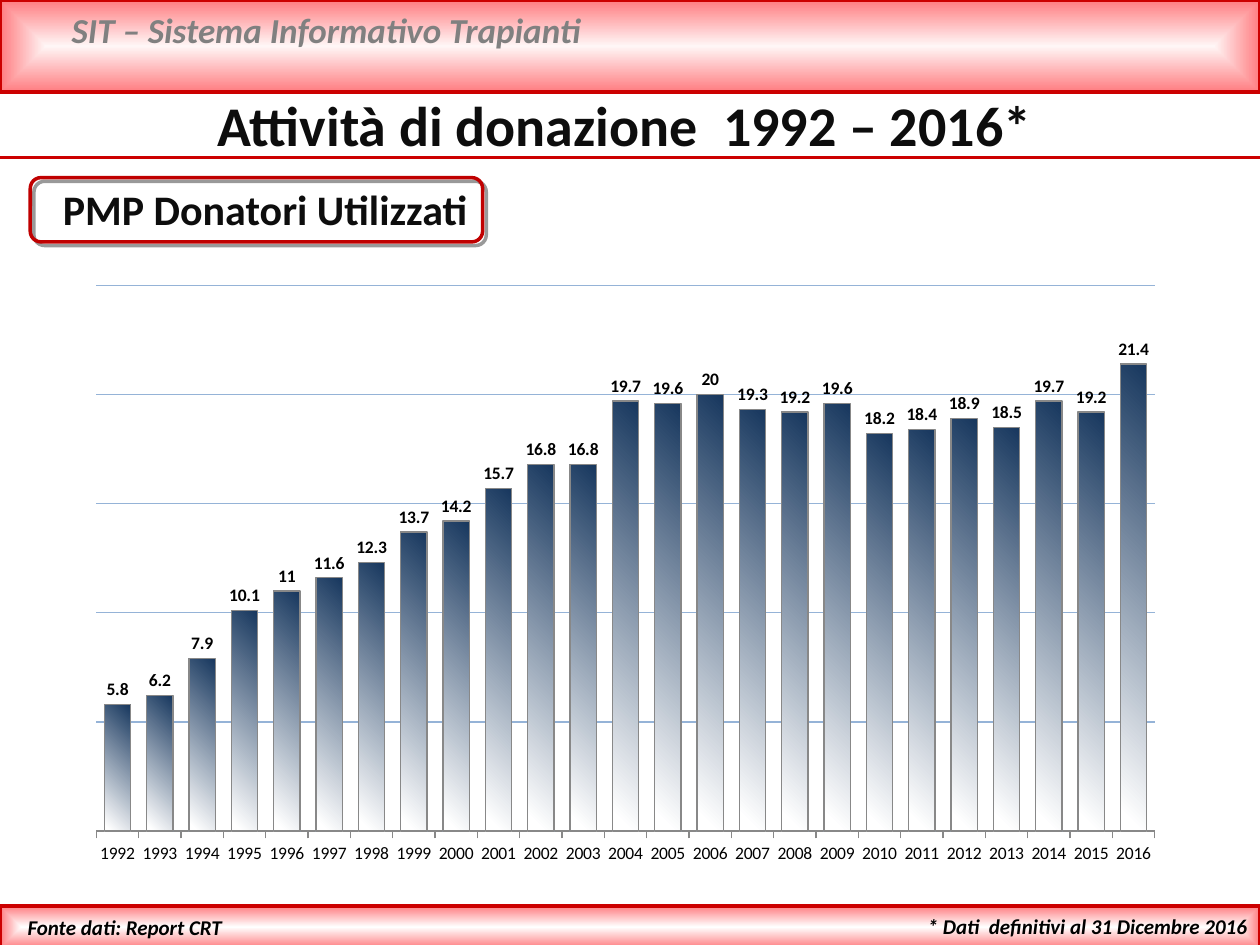
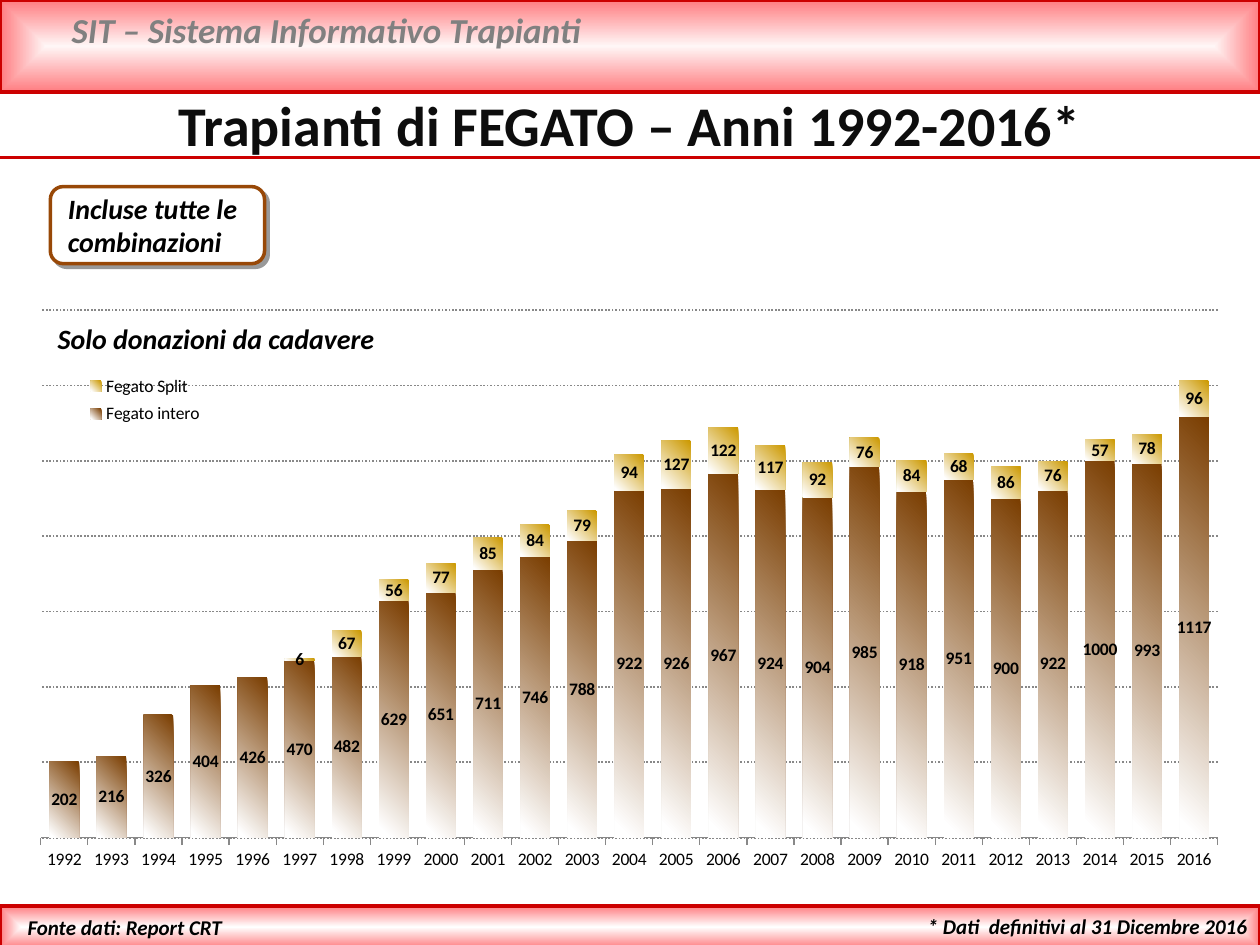
from pptx import Presentation
from pptx.chart.data import CategoryChartData as Data
from pptx.dml.color import RGBColor as Rgb
from pptx.enum.chart import XL_CHART_TYPE as Kind, XL_LABEL_POSITION as Spot
from pptx.enum.chart import XL_LEGEND_POSITION as Side, XL_TICK_MARK as Tick
from pptx.enum.dml import MSO_LINE as Dash
from pptx.enum.shapes import MSO_CONNECTOR as Link, MSO_SHAPE as Shape
from pptx.enum.text import MSO_ANCHOR as Anchor, MSO_AUTO_SIZE as Fit, PP_ALIGN as Align
from pptx.oxml import parse_xml
from pptx.oxml.ns import nsdecls, qn
from pptx.util import Inches, Pt

HUES = {
    "red": "CC0000", "rose": "FF7C80", "blush": "FFF6F6", "white": "FFFFFF",
    "gray": "808080", "rule": "888888", "black": "000000", "ink": "0D0D0D",
    "crimson": "C00000", "rust": "984807", "navy": "17375E", "sky": "95B3D7",
    "brown": "7A3D00", "gold": "CC9900",
}
INK = {name: Rgb.from_string(code) for name, code in HUES.items()}
FACE = "Calibri"

# Text styles: font values, then colour and alignment
STYLES = {
    "title": ({"size": Pt(32), "bold": True}, "ink", Align.CENTER),
    "head": ({"size": Pt(20), "bold": True, "italic": True}, "gray", Align.LEFT),
    "foot": ({"size": Pt(12), "bold": True, "italic": True}, "black", Align.LEFT),
    "date": ({"size": Pt(12), "bold": True, "italic": True}, "black", Align.RIGHT),
    "badge": ({"size": Pt(24), "bold": True}, "ink", Align.LEFT),
    "note": ({"size": Pt(16), "bold": True, "italic": True}, "black", Align.LEFT),
}

# Shared bands and texts; boxes are left, top, width, height in % of the slide
BANDS = [((0, 0, 100, 9.75), "blush"), ((0, 95.85, 100, 4.5), "white")]
COMMON = [
    ((4.7, 0.2, 89.8, 5.9), "SIT – Sistema Informativo Trapianti", "head"),
    ((58.7, 96, 41.3, 4), "* Dati  definitivi al 31 Dicembre 2016", "date"),
    ((1.2, 96.1, 32.1, 4), "Fonte dati: Report CRT", "foot"),
]
YEARS = [str(year) for year in range(1992, 2017)]

# What each slide holds
PAGES = [
    {
        "title": "Attività di donazione  1992 – 2016*", "wide": 99.2,
        "badge": ((2.4, 18.8, 35.9, 6.8), "crimson", False),
        "texts": [((4, 18.8, 35, 6.8), "PMP Donatori Utilizzati", "badge")],
        "chart": (5.9, 28.93, 87.5, 63.47), "kind": Kind.COLUMN_CLUSTERED,
        "lap": -20, "top": 25, "step": 5, "spot": Spot.OUTSIDE_END,
        "grid": ("sky", 0.75, Dash.SOLID), "edge": True, "legend": False,
        "series": [
            ("PMP", "navy", [5.8, 6.2, 7.9, 10.1, 11, 11.6, 12.3, 13.7, 14.2, 15.7,
                             16.8, 16.8, 19.7, 19.6, 20, 19.3, 19.2, 19.6, 18.2,
                             18.4, 18.9, 18.5, 19.7, 19.2, 21.4]),
        ],
    },
    {
        "title": "Trapianti di FEGATO – Anni 1992-2016*", "wide": 100,
        "badge": ((4, 19.75, 17, 8.15), "rust", True),
        "texts": [((4.4, 19.6, 16.5, 8.5), "Incluse tutte le combinazioni", "note"),
                  ((3.6, 33.35, 32.2, 4.95), "Solo donazioni da cadavere", "note")],
        "chart": (1.3, 31.6, 97.3, 61.35), "kind": Kind.COLUMN_STACKED,
        "lap": 100, "top": 1400, "step": 200, "spot": Spot.CENTER,
        "grid": ("rule", 1, Dash.ROUND_DOT), "edge": False, "legend": True,
        "series": [
            ("Fegato intero", "brown", [202, 216, 326, 404, 426, 470, 482, 629, 651,
                                        711, 746, 788, 922, 926, 967, 924, 904, 985,
                                        918, 951, 900, 922, 1000, 993, 1117]),
            ("Fegato Split", "gold", [None] * 5 + [6, 67, 56, 77, 85, 84, 79, 94, 127,
                                                   122, 117, 92, 76, 84, 68, 86, 76,
                                                   57, 78, 96]),
        ],
    },
]

deck = Presentation()
deck.slide_width, deck.slide_height = Inches(10), Inches(7.5)


def area(left, top, wide, high):
    """Turn percentages of the slide into lengths."""
    wd, ht = deck.slide_width / 100, deck.slide_height / 100
    return int(left * wd), int(top * ht), int(wide * wd), int(high * ht)


def shade(fill, node, start, end, last, course):
    """Give a fill two colour stops and a course (linear or path)."""
    fill.gradient()
    old = next(node.iter(qn("a:gradFill")))
    stops = "".join(f'<a:gs pos="{pos * 1000}"><a:srgbClr val="{HUES[hue]}"/></a:gs>'
                    for pos, hue in ((0, start), (last, end)))
    new = parse_xml(f'<a:gradFill {nsdecls("a")} rotWithShape="1">'
                    f'<a:gsLst>{stops}</a:gsLst>{course}</a:gradFill>')
    old.getparent().replace(old, new)


INWARD = ('<a:path path="shape"><a:fillToRect l="50000" t="50000" '
          'r="50000" b="50000"/></a:path>')
SLANT = '<a:lin ang="8100000" scaled="0"/>'

for page in PAGES:
    slide = deck.slides.add_slide(deck.slide_layouts[5])

    # Bands and the rule under the title
    for box, core in BANDS:
        band = slide.shapes.add_shape(Shape.RECTANGLE, *area(*box))
        band.shadow.inherit = False
        shade(band.fill, band.element, core, "rose", 100, INWARD)
        band.line.color.rgb, band.line.width = INK["red"], Pt(2)
    left, top, wide, _ = area(0, 16.65, 100, 0)
    rule = slide.shapes.add_connector(Link.STRAIGHT, left, top, wide, top)
    rule.line.color.rgb, rule.line.width = INK["red"], Pt(2)
    rule.element.spPr.append(parse_xml(f'<a:effectLst {nsdecls("a")}/>'))

    # Chart data
    data = Data()
    data.categories = YEARS
    for name, _, vals in page["series"]:
        data.add_series(name, vals)
    chart = slide.shapes.add_chart(page["kind"], *area(*page["chart"]), data).chart
    chart.has_title = False
    chart.font.name, chart.font.size = FACE, Pt(10)
    chart.font.color.rgb = INK["black"]

    # Axes
    years, scale = chart.category_axis, chart.value_axis
    years.major_tick_mark = Tick.OUTSIDE
    years.format.line.color.rgb = INK["rule"]
    years.format.line.width = Pt(0.75)
    scale.minimum_scale, scale.maximum_scale = 0, page["top"]
    scale.major_unit, scale.visible = page["step"], False
    scale.has_major_gridlines = True
    grid = scale.major_gridlines.format.line
    hue, thick, dash = page["grid"]
    grid.color.rgb, grid.width, grid.dash_style = INK[hue], Pt(thick), dash

    # Columns and their labels
    plot = chart.plots[0]
    plot.gap_width, plot.overlap, plot.vary_by_categories = 60, page["lap"], False
    for series, (_, hue, _) in zip(plot.series, page["series"]):
        series.invert_if_negative = False
        shade(series.format.fill, series._element, hue, "white", 96, SLANT)
        if page["edge"]:
            series.format.line.color.rgb = INK["rule"]
            series.format.line.width = Pt(0.75)
        labels = series.data_labels
        labels.show_value, labels.position = True, page["spot"]
        labels.font.name, labels.font.size, labels.font.bold = FACE, Pt(10), True
        labels.font.color.rgb = INK["black"]

    # Fixed places of the plot and legend inside the chart
    chart.has_legend = page["legend"]
    parts = [("c:plotArea", 0, '<c:layoutTarget val="inner"/>', (0.02, 0.02, 0.96, 0.91))]
    if page["legend"]:
        chart.legend.position, chart.legend.include_in_layout = Side.LEFT, True
        parts.append(("c:legend", 1, "", (0.05, 0.12, 0.11, 0.11)))
    for tag, place, target, share in parts:
        node = next(chart._chartSpace.iter(qn(tag)))
        for old in node.findall(qn("c:layout")):
            node.remove(old)
        modes = "".join(f'<c:{axis}Mode val="edge"/>' for axis in "xy")
        sizes = "".join(f'<c:{key} val="{val}"/>' for key, val in zip("xywh", share))
        node.insert(place, parse_xml(
            f'<c:layout {nsdecls("c")}><c:manualLayout>{target}{modes}{sizes}'
            '</c:manualLayout></c:layout>'))

    # Badge frame with a hard shadow
    box, hue, solid = page["badge"]
    badge = slide.shapes.add_shape(Shape.ROUNDED_RECTANGLE, *area(*box))
    badge.line.color.rgb, badge.line.width = INK[hue], Pt(2)
    if solid:
        badge.fill.solid()
        badge.fill.fore_color.rgb = INK["white"]
    else:
        badge.fill.background()
    badge.shadow.inherit = False
    badge.element.spPr.find(qn("a:effectLst")).append(parse_xml(
        f'<a:outerShdw {nsdecls("a")} blurRad="0" dist="38100" dir="2700000">'
        f'<a:srgbClr val="{HUES["black"]}"><a:alpha val="40000"/></a:srgbClr>'
        '</a:outerShdw>'))

    # Title and all other texts
    title = slide.shapes.title
    title.left, title.top, title.width, title.height = area(0, 8.95, page["wide"], 8.5)
    items = [(title, page["title"], "title")]
    for box, words, style in COMMON + page["texts"]:
        items.append((slide.shapes.add_textbox(*area(*box)), words, style))
    for shape, words, style in items:
        frame = shape.text_frame
        frame.text, frame.word_wrap, frame.auto_size = words, True, Fit.NONE
        frame.vertical_anchor = Anchor.TOP
        form, hue, align = STYLES[style]
        para = frame.paragraphs[0]
        para.alignment = align
        for key, val in form.items():
            setattr(para.font, key, val)
        para.font.name, para.font.color.rgb = FACE, INK[hue]

deck.save("out.pptx")
